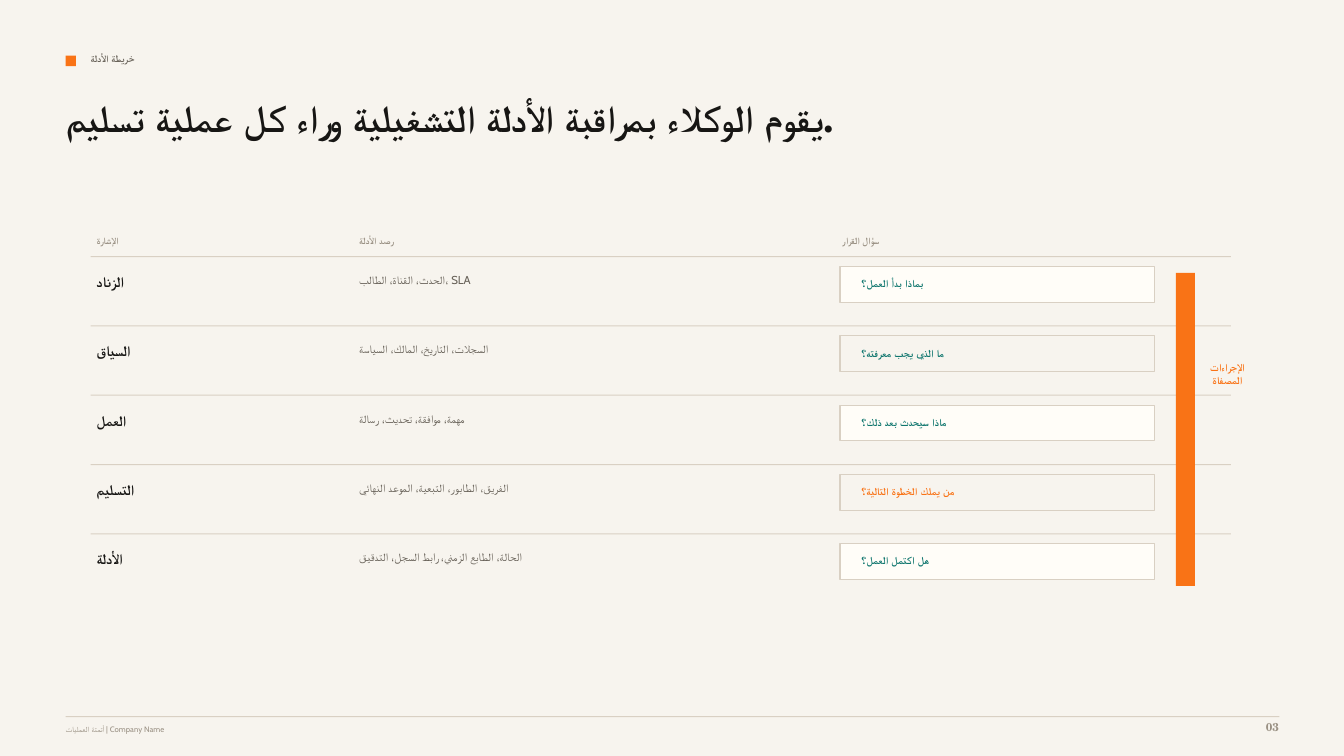
"""Build the evidence map slide on a grid of 128 columns by 72 rows."""
from pptx import Presentation
from pptx import util as u
from pptx.dml import color
from pptx.enum import shapes, text

CELL = u.Inches(13.333) / 128
SANS, SERIF = "Cabin", "TeX Gyre Schola"
PAPER, CARD, RULE = "F7F4EE", "FFFDF8", "D9D0C3"
INK, BODY, MUTED = "171614", "69635A", "9A9184"
ORANGE, TEAL = "F97316", "0F766E"
LEFT, TABLE_LEFT, TABLE_TOP, PITCH = 6.24, 8.64, 24.4, 6.6
SIGNAL, EVIDENCE, CARD_LEFT, QUESTION = 9.2, 34.2, 80, 82

STYLES = {
    "eyebrow": (BODY, {"size": u.Pt(7.1), "name": SANS, "bold": True}),
    "title": (INK, {"size": u.Pt(27), "name": SERIF, "bold": True}),
    "header": (MUTED, {"size": u.Pt(6.8), "name": SANS, "bold": True}),
    "signal": (INK, {"size": u.Pt(10.5), "name": SANS, "bold": True}),
    "evidence": (BODY, {"size": u.Pt(8.2), "name": SANS, "bold": False}),
    "question": (TEAL, {"size": u.Pt(7.5), "name": SANS, "bold": True}),
    "footer": (MUTED, {"size": u.Pt(5.6), "name": SANS, "bold": False}),
    "number": (MUTED, {"size": u.Pt(8.2), "name": SERIF, "bold": True}),
}

HEADERS = [
    (SIGNAL, 16, "الإشارة"),
    (EVIDENCE, 31, "رصد الأدلة"),
    (80.2, 28, "سؤال القرار"),
]
ROWS = [
    ("الزناد", "الحدث، القناة، الطالب، SLA", "بماذا بدأ العمل؟", TEAL),
    ("السياق", "السجلات، التاريخ، المالك، السياسة", "ما الذي يجب معرفته؟", TEAL),
    ("العمل", "مهمة، موافقة، تحديث، رسالة", "ماذا سيحدث بعد ذلك؟", TEAL),
    ("التسليم", "الفريق، الطابور، التبعية، الموعد النهائي", "من يملك الخطوة التالية؟", ORANGE),
    ("الأدلة", "الحالة، الطابع الزمني، رابط السجل، التدقيق", "هل اكتمل العمل؟", TEAL),
]


def rgb(value):
    """Turn a hex string into a colour."""
    return color.RGBColor.from_string(value)


def grid(*cells):
    """Turn grid counts into lengths."""
    return [u.Emu(round(n * CELL)) for n in cells]


def add_rect(s, box, fill=None, line=None):
    """Add a flat rectangle with an optional fill and outline."""
    sp = s.shapes.add_shape(shapes.MSO_SHAPE.RECTANGLE, *grid(*box))
    sp.shadow.inherit = False
    if fill:
        sp.fill.solid()
        sp.fill.fore_color.rgb = rgb(fill)
    else:
        sp.fill.background()
    if line:
        sp.line.color.rgb = rgb(line)
        sp.line.width = u.Pt(0.75)
    else:
        sp.line.fill.background()


def add_text(s, box, content, style, tint=None, align=text.PP_ALIGN.LEFT):
    """Add a wrapped text box without insets in a named style."""
    tf = s.shapes.add_textbox(*grid(*box)).text_frame
    frame = {"word_wrap": True, "margin_left": 0, "margin_right": 0,
             "margin_top": 0, "margin_bottom": 0}
    for key, value in frame.items():
        setattr(tf, key, value)
    p = tf.paragraphs[0]
    p.alignment = align
    r = p.add_run()
    r.text = content
    shade, font = STYLES[style]
    for key, value in font.items():
        setattr(r.font, key, value)
    r.font.color.rgb = rgb(tint or shade)


def add_evidence_row(s, index, signal, evidence, question, tint):
    """Add one ruled row with its signal, evidence and question card."""
    top = TABLE_TOP + index * PITCH
    add_rect(s, (TABLE_LEFT, top, 108.6, 0.1), RULE)
    add_text(s, (SIGNAL, top + 1.6, 18, 1.8), signal, "signal")
    add_text(s, (EVIDENCE, top + 1.6, 36, 3.4), evidence, "evidence")
    add_rect(s, (CARD_LEFT, top + 1, 30, 3.4), None if index % 2 else CARD, RULE)
    add_text(s, (QUESTION, top + 2, 26, 1.5), question, "question", tint)


def main():
    """Build and save the slide."""
    prs = Presentation()
    prs.slide_width, prs.slide_height = grid(128, 72)
    s = prs.slides.add_slide(prs.slide_layouts[6])

    add_rect(s, (0, 0, 128, 72), PAPER)
    add_rect(s, (LEFT, 5.3, 1, 1), ORANGE)
    add_text(s, (TABLE_LEFT, 5, 62, 1.8), "خريطة الأدلة", "eyebrow")
    add_text(s, (LEFT, 9, 85, 10),
             "يقوم الوكلاء بمراقبة الأدلة التشغيلية وراء كل عملية تسليم.", "title")

    for left, width, label in HEADERS:
        add_text(s, (left, 22.4, width, 1.6), label, "header")
    for index, row in enumerate(ROWS):
        add_evidence_row(s, index, *row)

    add_rect(s, (112, 26, 1.8, 29.8), ORANGE)
    add_text(s, (115.2, 34.4, 3.4, 11.8), "الإجراءات المصفاة", "question",
             ORANGE, text.PP_ALIGN.CENTER)

    add_rect(s, (LEFT, 68.2, 115.6, 0.1), RULE)
    add_text(s, (LEFT, 69, 76, 1.4), "أتمتة العمليات | Company Name", "footer")
    add_text(s, (117, 68.6, 4.8, 1.8), "03", "number", align=text.PP_ALIGN.RIGHT)
    prs.save("out.pptx")


if __name__ == "__main__":
    main()
